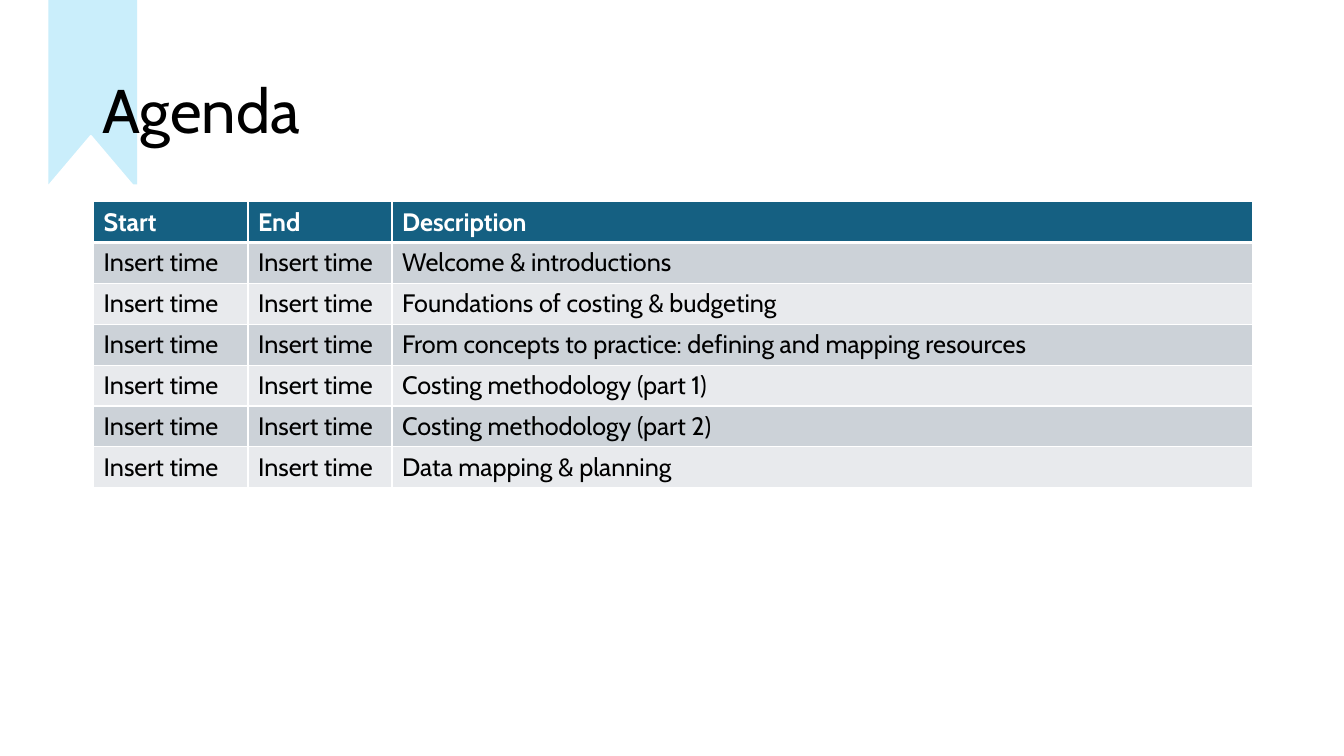
from dataclasses import dataclass

from lxml import etree
from pptx import Presentation
from pptx.dml.color import RGBColor
from pptx.enum.shapes import MSO_SHAPE
from pptx.enum.text import MSO_ANCHOR
from pptx.oxml.ns import qn
from pptx.util import Cm, Pt

RECTANGLE = MSO_SHAPE.RECTANGLE
TRIANGLE = MSO_SHAPE.ISOSCELES_TRIANGLE
MIDDLE = MSO_ANCHOR.MIDDLE


@dataclass(frozen=True)
class Theme:
    """Colours, font and type sizes of the slide."""
    font: str = "Cabin"
    title_size: int = 44
    table_size: int = 18
    text: str = "000000"
    white: str = "FFFFFF"
    ribbon: str = "CAEEFB"
    header: str = "156082"
    bands: tuple = ("CCD2D8", "E8EAED")
    border: int = 1
    header_border: int = 3


@dataclass(frozen=True)
class Box:
    """Region of the slide in centimetres."""
    left: float
    top: float
    width: float
    height: float

    def emu(self):
        """Return the region as lengths."""
        return [Cm(v) for v in (self.left, self.top, self.width, self.height)]


THEME = Theme()
TIME = "Insert time"
HEADINGS = ("Start", "End", "Description")
SESSIONS = (
    "Welcome & introductions",
    "Foundations of costing & budgeting",
    "From concepts to practice: defining and mapping resources",
    "Costing methodology (part 1)",
    "Costing methodology (part 2)",
    "Data mapping & planning",
)


def add_text(tf, text, size, color, bold=False):
    """Write one formatted run into the first paragraph."""
    p = tf.paragraphs[0]
    r = p.add_run()
    r.text = text
    for name, value in {"name": THEME.font, "size": Pt(size), "bold": bold}.items():
        setattr(r.font, name, value)
    r.font.color.rgb = RGBColor.from_string(color)
    return p


def set_borders(cell, widths):
    """Give the cell white borders of the given widths by side."""
    tc_pr = cell._tc.get_or_add_tcPr()
    for i, (side, width) in enumerate(widths.items()):
        ln = etree.Element(qn(f"a:ln{side}"), w=str(Pt(width)))
        fill = etree.SubElement(ln, qn("a:solidFill"))
        etree.SubElement(fill, qn("a:srgbClr"), val=THEME.white)
        tc_pr.insert(i, ln)


def add_part(slide, kind, box, color):
    """Add a plain filled shape."""
    sp = slide.shapes.add_shape(kind, *box.emu())
    sp.shadow.inherit = False
    sp.fill.solid()
    sp.fill.fore_color.rgb = RGBColor.from_string(color)
    sp.line.fill.background()
    return sp


def add_agenda(slide, box):
    """Place the agenda table in the box."""
    rows = [HEADINGS] + [(TIME, TIME, session) for session in SESSIONS]
    table = slide.shapes.add_table(len(rows), len(HEADINGS), *box.emu()).table
    time_widths = (3.89, 3.63)
    widths = (*time_widths, box.width - sum(time_widths))
    for column, width in zip(table.columns, widths):
        column.width = Cm(width)
    for i, texts in enumerate(rows):
        table.rows[i].height = Cm(box.height / len(rows))
        head = i == 0
        fill = THEME.header if head else THEME.bands[(i - 1) % 2]
        color = THEME.white if head else THEME.text
        borders = dict.fromkeys("LRTB", THEME.border)
        if i < 2:
            borders["B" if head else "T"] = THEME.header_border
        for j, text in enumerate(texts):
            cell = table.cell(i, j)
            cell.fill.solid()
            cell.fill.fore_color.rgb = RGBColor.from_string(fill)
            set_borders(cell, borders)
            add_text(cell.text_frame, text, THEME.table_size, color, head)


def add_ribbon(slide, box):
    """Place the ribbon with its notched lower end in the box."""
    add_part(slide, RECTANGLE, box, THEME.ribbon)
    overhang, notch = 0.2, 1.5
    bottom = box.top + box.height
    notch_box = Box(box.left - overhang, bottom - 1.22, 2.54, notch)
    sp = add_part(slide, TRIANGLE, notch_box, THEME.white)
    sp.line.color.rgb = RGBColor.from_string(THEME.white)
    sp.line.width = Pt(1.5)


def add_title(slide, box, text):
    """Place the title, centred vertically in the box."""
    tf = slide.shapes.add_textbox(*box.emu()).text_frame
    for name, value in {"word_wrap": True, "vertical_anchor": MIDDLE}.items():
        setattr(tf, name, value)
    add_text(tf, text, THEME.title_size, THEME.text).line_spacing = 0.9


def main():
    """Build and save the agenda slide."""
    prs = Presentation()
    prs.slide_width, prs.slide_height = Cm(33.87), Cm(19.05)
    slide = prs.slides.add_slide(prs.slide_layouts[6])
    add_agenda(slide, Box(2.36, 5.08, 29.21, 7.21))
    add_ribbon(slide, Box(1.22, 0, 2.24, 4.65))
    add_title(slide, Box(2.33, 1.01, 29.21, 3.68), "Agenda")
    prs.save("out.pptx")


if __name__ == "__main__":
    main()
